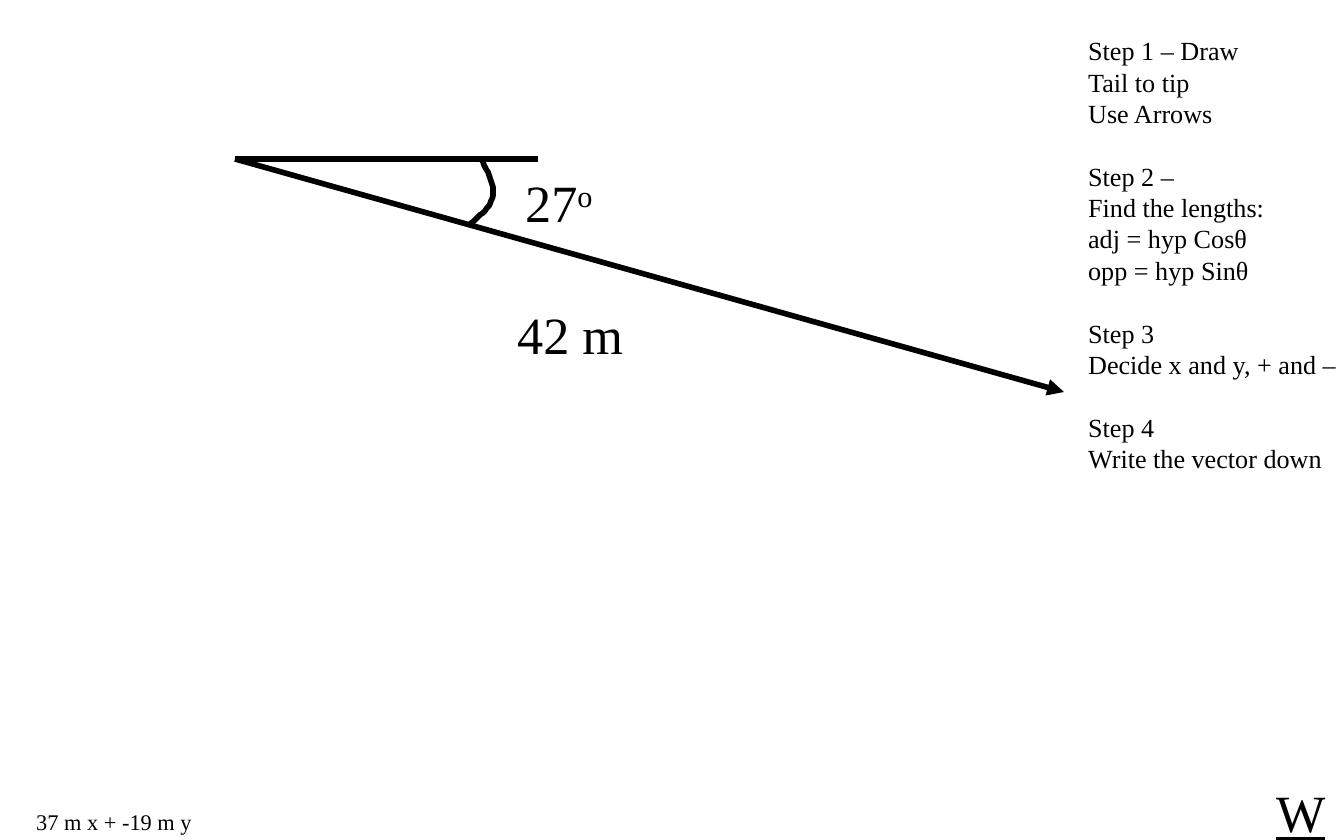
from pptx import Presentation
from pptx.dml.color import RGBColor
from pptx.enum.shapes import MSO_CONNECTOR
from pptx.enum.text import MSO_AUTO_SIZE
from pptx.oxml.ns import qn
from pptx.util import Emu, Pt
from lxml.etree import SubElement

EMU_PER_PX = 914400 / 134.4
FONT = "Times New Roman"
INK = "000000"
STEP_SIZE = 14
STEP_PITCH = 16.8
STEPS = [
    ["Step 1 – Draw", "Tail to tip", "Use Arrows"],
    ["Step 2 –", "Find the lengths:", "adj = hyp Cosθ", "opp = hyp Sinθ"],
    ["Step 3", "Decide x and y, + and –"],
    ["Step 4", "Write the vector down"],
]


def px(n):
    return Emu(round(n * EMU_PER_PX))


def color(code):
    return RGBColor.from_string(code)


def style_line(s, width=3):
    s.line.color.rgb = color(INK)
    s.line.width = Pt(width)


def add_run(p, text, size=28, underline=None, raised=False):
    r = p.add_run()
    r.text = text
    r.font.name = FONT
    r.font.size = Pt(size)
    r.font.color.rgb = color(INK)
    r.font.underline = underline
    if raised:
        r.font._element.set("baseline", "30000")


def add_text(slide, box, text="", **fmt):
    """Add an unwrapped text box and return its text frame."""
    tf = slide.shapes.add_textbox(*map(px, box)).text_frame
    tf.word_wrap = False
    tf.auto_size = MSO_AUTO_SIZE.SHAPE_TO_FIT_TEXT
    if text:
        add_run(tf.paragraphs[0], text, **fmt)
    return tf


def add_line(slide, start, end, arrow=False):
    s = slide.shapes.add_connector(MSO_CONNECTOR.STRAIGHT, *map(px, start + end))
    style_line(s)
    if arrow:
        SubElement(s.line._get_or_add_ln(), qn("a:tailEnd"), type="triangle")
    SubElement(s._element.spPr, qn("a:effectLst"))


def bezier(a, b, c, d, steps=12):
    """Points along a cubic curve, without its start."""
    for i in range(1, steps + 1):
        t = i / steps
        u = 1 - t
        yield tuple(u**3 * m + 3 * u * u * t * n + 3 * u * t * t * o + t**3 * q
                    for m, n, o, q in zip(a, b, c, d))


def add_angle_arc(slide):
    top, middle, bottom = (481, 159), (493, 196), (470, 224)
    points = [*bezier(top, (488, 172), (495, 185), middle),
              *bezier(middle, (491, 207), (481, 215), bottom)]
    builder = slide.shapes.build_freeform(*top, scale=EMU_PER_PX)
    builder.add_line_segments(points, close=False)
    s = builder.convert_to_shape()
    s.shadow.inherit = False
    s.fill.background()
    style_line(s)


def add_steps(slide):
    tf = add_text(slide, (1075, 28, 280, 489))
    for i, step in enumerate(STEPS):
        for j, text in enumerate(step):
            first = i == j == 0
            p = tf.paragraphs[0] if first else tf.add_paragraph()
            p.line_spacing = Pt(STEP_PITCH)
            if j == 0 and not first:
                p.space_before = Pt(STEP_PITCH)
            add_run(p, text, size=STEP_SIZE)


def main():
    prs = Presentation()
    prs.slide_width, prs.slide_height = px(1344), px(840)
    slide = prs.slides.add_slide(prs.slide_layouts[6])

    # Answer and corner mark
    add_text(slide, (23, 802, 185, 40), "37 m x + -19 m y", size=12)
    add_text(slide, (1263, 774, 77, 77), "W", underline=True)

    # Vector and its angle to the horizontal
    tail = (235, 159)
    add_line(slide, tail, (538, 159))
    add_line(slide, tail, (1064, 392), arrow=True)
    add_text(slide, (504, 296, 134, 77), "42 m")
    add_angle_arc(slide)
    tf = add_text(slide, (512, 164, 98, 77), "27")
    add_run(tf.paragraphs[0], "o", raised=True)

    # Solution steps
    add_steps(slide)

    prs.save("out.pptx")


if __name__ == "__main__":
    main()
